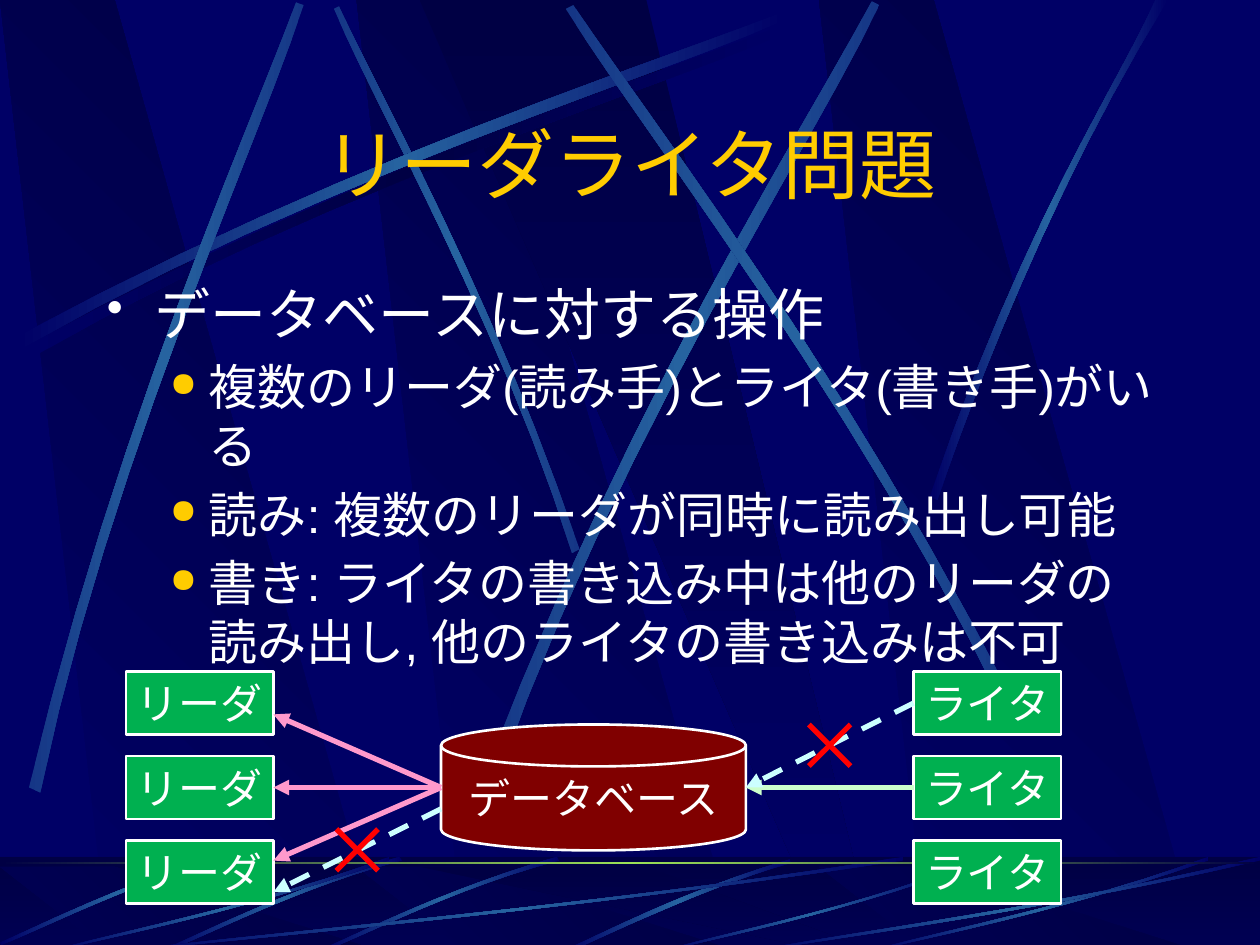
from copy import deepcopy

from lxml import etree
from pptx import Presentation
from pptx.dml.color import RGBColor
from pptx.enum.dml import MSO_LINE
from pptx.enum.lang import MSO_LANGUAGE_ID
from pptx.enum.shapes import MSO_CONNECTOR, MSO_SHAPE
from pptx.enum.text import MSO_ANCHOR, PP_ALIGN
from pptx.oxml.ns import qn
from pptx.util import Inches, Pt

RECTANGLE = MSO_SHAPE.RECTANGLE
DISK = MSO_SHAPE.FLOWCHART_MAGNETIC_DISK
STRAIGHT = MSO_CONNECTOR.STRAIGHT
DASH = MSO_LINE.DASH
JAPANESE = MSO_LANGUAGE_ID.JAPANESE
MIDDLE = MSO_ANCHOR.MIDDLE
CENTER = PP_ALIGN.CENTER

NAVY = RGBColor(0x00, 0x00, 0x66)
DARK_NAVY = RGBColor(0x00, 0x00, 0x44)
BEAM_BLUE = RGBColor(0x26, 0x63, 0xA0)
BEAM_END = RGBColor(0x15, 0x36, 0x86)
LIME = RGBColor(0x9C, 0xE1, 0x57)
GOLD = RGBColor(0xFF, 0xCC, 0x00)
WHITE = RGBColor(0xFF, 0xFF, 0xFF)
MAROON = RGBColor(0x80, 0x00, 0x00)
GREEN = RGBColor(0x00, 0xB0, 0x50)
PINK = RGBColor(0xFF, 0x99, 0xCC)
PALE_GREEN = RGBColor(0xCC, 0xFF, 0xCC)
PALE_CYAN = RGBColor(0xCC, 0xFF, 0xFF)
RED = RGBColor(0xFF, 0x00, 0x00)

presentation = Presentation()
presentation.slide_width = Inches(10)
presentation.slide_height = Inches(7.5)
slide = presentation.slides.add_slide(presentation.slide_layouts[6])
shapes = slide.shapes
slide.background.fill.solid()
slide.background.fill.fore_color.rgb = NAVY


def fill_gradient(shape, colours, angle):
    """Fill with evenly spaced colours; the angle runs counter-clockwise."""
    shape.shadow.inherit = False
    shape.line.fill.background()
    shape.fill.gradient()
    shape.fill.gradient_angle = angle
    if len(colours) == 3:
        stop_list = shape.fill._fill._gradFill.find(qn("a:gsLst"))
        stop_list.append(deepcopy(stop_list[-1]))
    for index, (stop, colour) in enumerate(zip(shape.fill.gradient_stops, colours)):
        stop.color.rgb = colour
        stop.position = index / (len(colours) - 1)


def add_polygon(points, colours, angle):
    corners = [(Inches(x), Inches(y)) for x, y in points]
    builder = shapes.build_freeform(*corners[0])
    builder.add_line_segments(corners[1:], close=True)
    fill_gradient(builder.convert_to_shape(), colours, angle)


# Background bands on the wall, then the same bands flattened on the floor
for top, height in ((0, 7.5), (6.88, 0.67)):
    if top:
        floor = shapes.add_shape(RECTANGLE, 0, Inches(6.8), Inches(10), Inches(0.75))
        fill_gradient(floor, (DARK_NAVY, NAVY), 270)
    bottom = top + height
    for left in (2.83, 0, 6.5):
        band = ((left + 0.86, bottom), (left + 3.02, bottom), (left + 0.91, top), (left, top))
        add_polygon(band, (NAVY, DARK_NAVY), 45)
    add_polygon(((3.33, top), (6.58, bottom), (6.94, bottom), (5.13, top)), (DARK_NAVY, NAVY), 270)

    if not top:
        # Light beams: each is two cubic curves of four points
        WALL_BEAM = ((0.14, 2.67), (2.78, 1.25), (5.18, 0.51), (6.2, 0.1),
                     (6.23, 0.16), (5.22, 0.61), (2.48, 1.43), (0.17, 2.77))
        beams = [
            (tuple((x + 0.06, y + 0.08) for x, y in WALL_BEAM), NAVY, DARK_NAVY),
            (((4.6, 4.36), (3.91, 2.34), (3.02, 0.77), (2.69, 0.05),
              (2.65, 0.07), (2.95, 0.79), (3.98, 2.58), (4.54, 4.39)), BEAM_END, BEAM_BLUE),
            (WALL_BEAM, NAVY, BEAM_BLUE),
            (((0.23, 6.25), (0.93, 3.34), (1.97, 1.05), (2.35, 0.02),
              (2.41, 0.04), (2.07, 1.09), (0.86, 3.68), (0.32, 6.29)), BEAM_END, BEAM_BLUE),
            (((3.85, 6.14), (4.98, 3.2), (6.38, 1.02), (6.92, 0.01),
              (6.98, 0.04), (6.49, 1.08), (4.86, 3.55), (3.94, 6.21)), BEAM_END, BEAM_BLUE),
            (((8.06, 5.6), (6.7, 2.93), (5.16, 0.95), (4.55, 0.04),
              (4.49, 0.07), (5.07, 1.01), (6.85, 3.25), (7.99, 5.67)), BEAM_END, BEAM_BLUE),
            (((7.38, 3.94), (8.14, 1.73), (8.88, 0.66), (9.17, 0),
              (9.27, 0), (8.36, 1.45), (7.69, 3.22), (7.44, 3.97)), NAVY, BEAM_BLUE),
        ]
    else:
        veil = shapes.add_shape(RECTANGLE, 0, Inches(6.8), Inches(10), Inches(0.75))
        veil.shadow.inherit = False
        veil.line.fill.background()
        veil.fill.solid()
        veil.fill.fore_color.rgb = DARK_NAVY
        colour_element = veil.fill._fill._solidFill[0]
        etree.SubElement(colour_element, qn("a:alpha"), val="50000")

        SHORT_BEAM = ((1.86, 6.8), (0.99, 7.05), (0.31, 7.4), (0, 7.53),
                      (0.01, 7.55), (0.32, 7.43), (1.09, 7.03), (1.88, 6.83))
        LONG_BEAM = ((1, 0.04), (0.57, 0.57), (0.17, 0.85), (0, 1),
                     (0, 0.99), (0.17, 0.81), (0.62, 0.51), (1, 0))
        beams = [(((6.27, 6.82), (5.37, 7.09), (4.77, 7.42), (4.48, 7.54),
                   (4.53, 7.55), (4.9, 7.38), (5.71, 7), (6.28, 6.85)), NAVY, BEAM_BLUE)]
        for left, rise in ((2.56, 0), (1.31, 0), (0, 0.05)):
            points = tuple((left + x, y - rise) for x, y in SHORT_BEAM)
            beams.append((points, NAVY, BEAM_BLUE))
        for left, width, beam_top in ((1, 6.17, 6.8), (0.42, 2.67, 6.8), (5.27, 2.31, 6.89),
                                      (6.92, 2.67, 6.8), (6, 4, 6.8)):
            points = tuple((left + width * x, beam_top + (7.55 - beam_top) * y) for x, y in LONG_BEAM)
            beams.append((points, NAVY, BEAM_BLUE))

    for points, end_colour, middle_colour in beams:
        outline = []
        for curve in (points[:4], points[4:]):
            for step in range(13):
                t = step / 12
                weights = ((1 - t) ** 3, 3 * t * (1 - t) ** 2, 3 * t * t * (1 - t), t ** 3)
                outline.append([sum(w * point[axis] for w, point in zip(weights, curve))
                                for axis in (0, 1)])
        add_polygon(outline, (end_colour, middle_colour, end_colour), 0)

# Horizon line
horizon = shapes.add_shape(RECTANGLE, 0, Inches(6.84), Inches(10), Inches(0.02))
fill_gradient(horizon, (DARK_NAVY, LIME, DARK_NAVY), 0)

# Title
title = shapes.add_textbox(Inches(0.75), Inches(0.88), Inches(8.5), Inches(0.83))
title.text_frame.word_wrap = True
title.text_frame.vertical_anchor = MIDDLE
title.text_frame.text = "リーダライタ問題"
paragraph = title.text_frame.paragraphs[0]
paragraph.alignment = CENTER
font = paragraph.runs[0].font
font.name, font.size, font.color.rgb = "Montserrat", Pt(44), GOLD
font.language_id = JAPANESE

# Bulleted body
BODY = (
    (0, "データベースに対する操作"),
    (1, "複数のリーダ(読み手)とライタ(書き手)がいる"),
    (1, "読み: 複数のリーダが同時に読み出し可能"),
    (1, "書き: ライタの書き込み中は他のリーダの読み出し, 他のライタの書き込みは不可"),
)
LEVELS = ((0.38, 0.38, WHITE, 85, "•", 32), (0.81, 0.31, GOLD, 70, "●", 28))
body = shapes.add_textbox(Inches(0.75), Inches(2.17), Inches(8.5), Inches(2.92))
body.text_frame.word_wrap = True
for index, (level, text) in enumerate(BODY):
    margin, hanging, bullet_colour, bullet_size, bullet, size = LEVELS[level]
    paragraph = body.text_frame.paragraphs[0] if index == 0 else body.text_frame.add_paragraph()
    paragraph.text = text
    paragraph.level = level
    properties = paragraph._p.get_or_add_pPr()
    properties.set("marL", str(Inches(margin)))
    properties.set("indent", str(-Inches(hanging)))
    colour_parent = etree.SubElement(properties, qn("a:buClr"))
    etree.SubElement(colour_parent, qn("a:srgbClr"), val=str(bullet_colour))
    etree.SubElement(properties, qn("a:buSzPct"), val=str(bullet_size * 1000))
    etree.SubElement(properties, qn("a:buChar"), char=bullet)
    paragraph.space_before = Pt(size * 0.2 if index else 0)
    font = paragraph.runs[0].font
    font.name, font.size, font.color.rgb = "Arial", Pt(size), WHITE
    font.language_id = JAPANESE

# Database, readers and writers
nodes = [(DISK, 3.5, 5.75, 2.42, 1, MAROON, "データベース")]
for left, label in ((1, "リーダ"), (7.25, "ライタ")):
    for row in range(3):
        nodes.append((RECTANGLE, left, 5.33 + row * 0.67, 1.17, 0.5, GREEN, label))
boxes = []
for kind, left, top, width, height, colour, label in nodes:
    box = shapes.add_shape(kind, Inches(left), Inches(top), Inches(width), Inches(height))
    box.shadow.inherit = False
    box.fill.solid()
    box.fill.fore_color.rgb = colour
    box.line.color.rgb = WHITE
    box.line.width = Pt(1.5)
    box.text_frame.word_wrap = False
    box.text_frame.vertical_anchor = MIDDLE
    box.text_frame.text = label
    paragraph = box.text_frame.paragraphs[0]
    paragraph.alignment = CENTER
    font = paragraph.runs[0].font
    font.name, font.size, font.color.rgb = "Times New Roman", Pt(24), WHITE
    font.language_id = JAPANESE
    boxes.append(box)
readers, writers = boxes[1:4], boxes[4:]

# Arrows: ends, colour, dashed, arrowhead, box at the start, box at the end
links = [
    (3.5, 6.25, 2.17, 5.67, PINK, False, True, None, None),
    (3.5, 6.25, 2.17, 6.25, PINK, False, True, None, readers[1]),
    (3.5, 6.25, 2.17, 6.83, PINK, False, True, None, None),
    (7.25, 6.25, 5.92, 6.25, PALE_GREEN, False, True, writers[1], None),
    (7.25, 5.58, 5.92, 6.25, PALE_CYAN, True, True, writers[0], None),
    (3.5, 6.42, 2.17, 7.08, PALE_CYAN, True, True, None, None),
]
# Red crosses over the forbidden accesses
for left, top in ((6.42, 5.75), (2.67, 6.58)):
    right, bottom = left + 0.33, top + 0.33
    links.append((left, top, right, bottom, RED, False, False, None, None))
    links.append((right, top, left, bottom, RED, False, False, None, None))
for x1, y1, x2, y2, colour, dashed, arrow, start_box, end_box in links:
    connector = shapes.add_connector(STRAIGHT, Inches(x1), Inches(y1), Inches(x2), Inches(y2))
    if start_box:
        connector.begin_connect(start_box, 1)
    if end_box:
        connector.end_connect(end_box, 3)
    connector.line.color.rgb = colour
    connector.line.width = Pt(3)
    if dashed:
        connector.line.dash_style = DASH
    if arrow:
        etree.SubElement(connector.line._get_or_add_ln(), qn("a:tailEnd"), type="triangle")
    etree.SubElement(connector._element.spPr, qn("a:effectLst"))

presentation.save("out.pptx")
